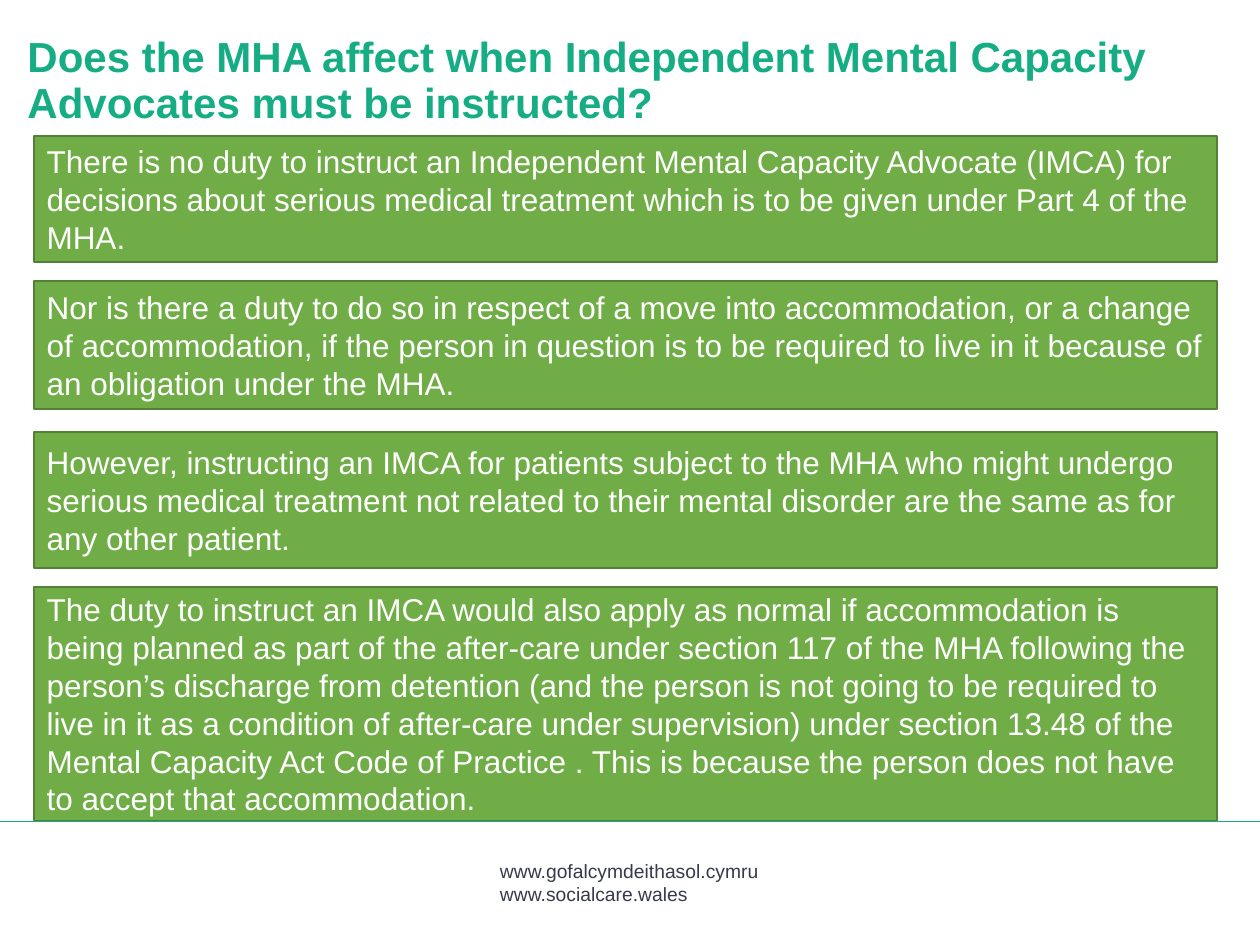
from lxml import etree
from pptx import Presentation
from pptx.dml.color import RGBColor
from pptx.enum.shapes import MSO_CONNECTOR as Connector, MSO_SHAPE as Shape
from pptx.enum.text import MSO_ANCHOR as Anchor, MSO_AUTO_SIZE as AutoSize, PP_ALIGN as Align
from pptx.oxml.ns import qn
from pptx.util import Cm, Pt

# Content
TITLE = "Does the MHA affect when Independent Mental Capacity Advocates must be instructed?"
POINTS = [  # top (cm), height (cm), text
    (2.74, 2.54, "There is no duty to instruct an Independent Mental Capacity Advocate (IMCA) for "
     "decisions about serious medical treatment which is to be given under Part 4 of the MHA."),
    (5.66, 2.59, "Nor is there a duty to do so in respect of a move into accommodation, or a change "
     "of accommodation, if the person in question is to be required to live in it because of "
     "an obligation under the MHA."),
    (8.71, 2.74, "However, instructing an IMCA for patients subject to the MHA who might undergo "
     "serious medical treatment not related to their mental disorder are the same as for "
     "any other patient."),
    (11.84, 4.7, "The duty to instruct an IMCA would also apply as normal if accommodation is "
     "being planned as part of the after-care under section 117 of the MHA following the "
     "person’s discharge from detention (and the person is not going to be required to "
     "live in it as a condition of after-care under supervision) under section 13.48 of the "
     "Mental Capacity Act Code of Practice . This is because the person does not have "
     "to accept that accommodation."),
]
WEBSITES = ["www.gofalcymdeithasol.cymru", "www.socialcare.wales"]

COLOURS = {"teal": "16AD85", "green": "70AD47", "border": "538035",
           "white": "FFFFFF", "slate": "37394C"}


def colour(name):
    return RGBColor.from_string(COLOURS[name])


def write(frame, lines, size, tint, bold=False):
    frame.word_wrap = True
    frame.auto_size = AutoSize.NONE
    frame.text = "\n".join(lines)
    for paragraph in frame.paragraphs:
        paragraph.alignment = Align.LEFT
        font = paragraph.font
        font.name, font.size, font.bold = "Arial", Pt(size), bold
        font.color.rgb = colour(tint)


deck = Presentation()
deck.slide_width, deck.slide_height = Cm(25.4), Cm(19.05)
slide = deck.slides.add_slide(deck.slide_layouts[5])
shapes = slide.shapes

# Title
title = shapes.title
title.left, title.top, title.width, title.height = Cm(0.3), Cm(0.61), Cm(24.59), Cm(2.1)
write(title.text_frame, [TITLE], 24, "teal", bold=True)
title.text_frame.vertical_anchor = Anchor.TOP
title.text_frame.paragraphs[0].line_spacing = 0.9

# Footer: rule and web addresses
rule = shapes.add_connector(Connector.STRAIGHT, 0, Cm(16.56), deck.slide_width, Cm(16.56))
rule.line.color.rgb = colour("teal")
rule.line.width = Pt(1)
etree.SubElement(rule._element.spPr, qn("a:effectLst"))
websites = shapes.add_textbox(Cm(9.83), Cm(17.2), Cm(5.74), Cm(1.18))
write(websites.text_frame, WEBSITES, 11, "slate")

# Green panels
for top, height, text in POINTS:
    panel = shapes.add_shape(Shape.RECTANGLE, Cm(0.69), Cm(top), Cm(23.85), Cm(height))
    panel.shadow.inherit = False
    panel.fill.solid()
    panel.fill.fore_color.rgb = colour("green")
    panel.line.color.rgb = colour("border")
    panel.line.width = Pt(1)
    write(panel.text_frame, [text], 18, "white")
    panel.text_frame.vertical_anchor = Anchor.MIDDLE

deck.save("out.pptx")
